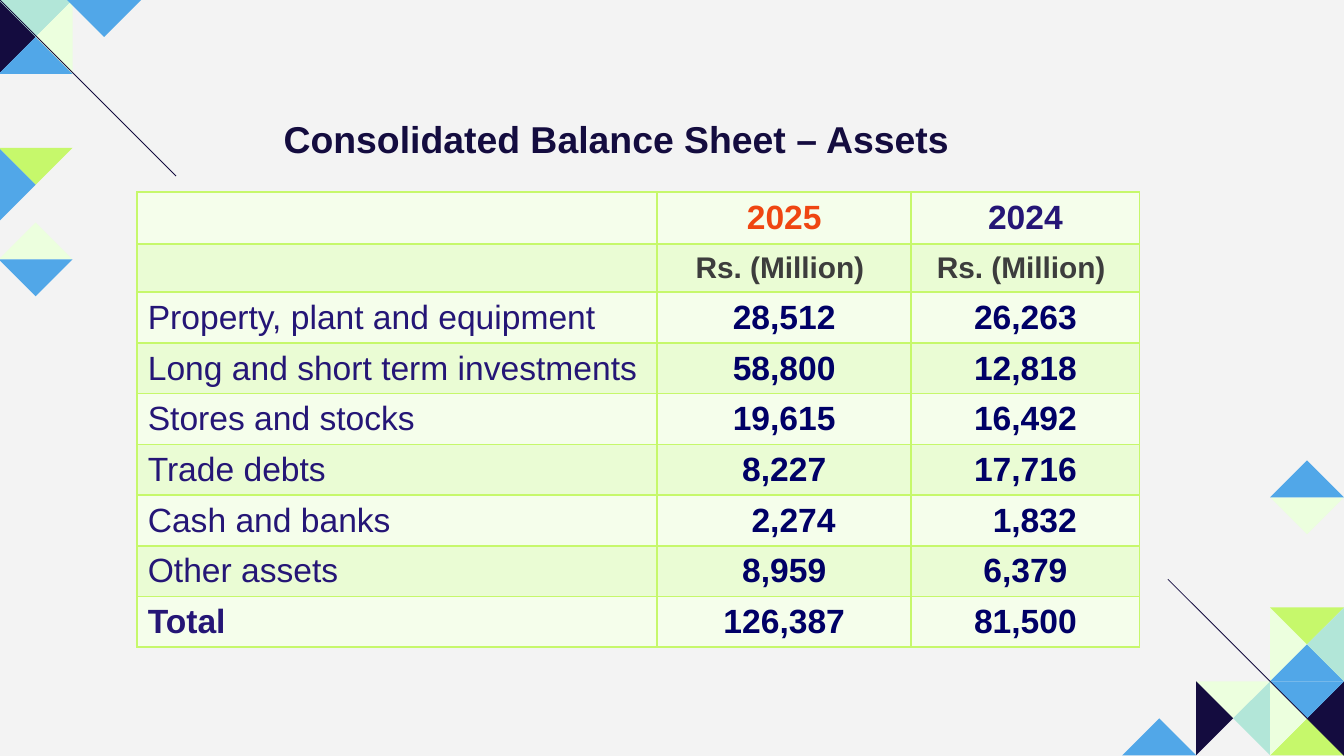
from dataclasses import dataclass

from lxml.etree import SubElement
from pptx import Presentation
from pptx.dml.color import RGBColor
from pptx.enum.shapes import MSO_CONNECTOR
from pptx.enum.text import MSO_ANCHOR, PP_ALIGN
from pptx.oxml.ns import qn
from pptx.util import Inches, Pt


@dataclass(frozen=True)
class Theme:
    """Colours, font and type sizes of the slide."""
    font: str = "Arial"
    paper: str = "F3F3F3"
    navy: str = "140C3F"
    sky: str = "51A7E8"
    mint: str = "B2E6D8"
    pale: str = "ECFFDE"
    lime: str = "C6F86B"
    label: str = "251676"
    value: str = "000066"
    accent: str = "EF4611"
    unit: str = "3D3D3D"
    bands: tuple = ("F5FEEB", "EAFCD4")
    title: int = 20
    body: int = 18
    small: int = 16


THEME = Theme()
TILE = 0.55
SIDES = {
    "top": ((0, 0), (1, 0)),
    "right": ((1, 0), (1, 1)),
    "bottom": ((1, 1), (0, 1)),
    "left": ((0, 1), (0, 0)),
}
TILES = [
    (8.9, 5.07, {"top": THEME.pale, "right": THEME.mint, "left": THEME.navy}),
    (9.45, 4.52, {"left": THEME.pale, "top": THEME.lime,
                  "bottom": THEME.sky, "right": THEME.mint}),
    (9.45, 5.07, {"right": THEME.navy, "bottom": THEME.lime,
                  "top": THEME.sky, "left": THEME.pale}),
    (8.35, 5.07, {"bottom": THEME.sky}),
    (9.45, 3.7, {"top": THEME.pale}),
    (9.45, 3.15, {"bottom": THEME.sky}),
    (-0.01, 0, {"left": THEME.navy, "top": THEME.mint,
                "bottom": THEME.sky, "right": THEME.pale}),
    (0.5, 0, {"top": THEME.sky}),
    (-0.01, 1.1, {"top": THEME.lime, "left": THEME.sky}),
    (-0.01, 1.38, {"bottom": THEME.pale}),
    (-0.01, 1.93, {"top": THEME.sky}),
]
LINES = [(0, 0), (8.69, 4.31)]
REACH = 1.31
ASSETS = [
    ("", "2025", "2024"),
    ("", "Rs. (Million) ", "Rs. (Million) "),
    ("Property, plant and equipment", "28,512", "26,263"),
    ("Long and short term investments", "58,800", "12,818"),
    ("Stores and stocks", "19,615", "16,492"),
    ("Trade debts", "8,227", "17,716"),
    ("Cash and banks", "2,274", "1,832"),
    ("Other assets", "8,959", "6,379"),
    ("Total", "126,387", "81,500"),
]
WIDTHS = (3.87, 1.89, 1.7)
HEIGHT, LOW = 3.38, 0.36
UNIT_ROW, CASH_ROW = 1, 6


def style(frame, size, color, bold=True):
    """Format every run of a text frame."""
    for par in frame.paragraphs:
        for run in par.runs:
            run.font.name = THEME.font
            run.font.size = Pt(size)
            run.font.bold = bold
            run.font.color.rgb = RGBColor.from_string(color)


def add_wedge(slide, left, top, side, color):
    """Draw the quarter of a square tile that rests on one side."""
    ends = SIDES[side] + ((0.5, 0.5),)
    spots = [(Inches(left + TILE * x), Inches(top + TILE * y)) for x, y in ends]
    pen = slide.shapes.build_freeform(*spots[0])
    pen.add_line_segments(spots[1:], close=True)
    wedge = pen.convert_to_shape()
    wedge.shadow.inherit = False
    wedge.fill.solid()
    wedge.fill.fore_color.rgb = RGBColor.from_string(color)
    wedge.line.fill.background()


def add_line(slide, left, top):
    """Draw a thin diagonal line down to the right."""
    line = slide.shapes.add_connector(
        MSO_CONNECTOR.STRAIGHT, Inches(left), Inches(top),
        Inches(left + REACH), Inches(top + REACH))
    line.line.color.rgb = RGBColor.from_string(THEME.navy)
    line.line.width = Pt(0.42)
    SubElement(line._element.spPr, qn("a:effectLst"))


def add_title(slide, text):
    """Place and format the title."""
    title = slide.shapes.title
    title.left, title.top = Inches(2.01), Inches(0.81)
    title.width, title.height = Inches(5.28), Inches(0.44)
    frame = title.text_frame
    frame.text = text
    frame.word_wrap = True
    frame.vertical_anchor = MSO_ANCHOR.MIDDLE
    frame.paragraphs[0].alignment = PP_ALIGN.LEFT
    style(frame, THEME.title, THEME.navy)


def add_rules(cell):
    """Give a cell a thin border on all sides."""
    props = cell._tc.get_or_add_tcPr()
    for tag in ("a:lnL", "a:lnR", "a:lnT", "a:lnB"):
        rule = SubElement(props, qn(tag), w=str(Pt(1)))
        fill = SubElement(rule, qn("a:solidFill"))
        SubElement(fill, qn("a:srgbClr"), val=THEME.lime)


def pick_look(row, col):
    """Return the size, colour and weight of a cell's text."""
    if row == 0:
        return THEME.body, THEME.accent if col == 1 else THEME.label, True
    if row == UNIT_ROW:
        return THEME.small, THEME.unit, True
    if col == 0:
        return THEME.body, THEME.label, row == len(ASSETS) - 1
    return THEME.body, THEME.value, True


def fill_cell(cell, row, col, text):
    """Write and format one table cell."""
    add_rules(cell)
    cell.fill.solid()
    cell.fill.fore_color.rgb = RGBColor.from_string(THEME.bands[row % 2])
    cell.vertical_anchor = MSO_ANCHOR.MIDDLE
    shift = 0.14 if row == CASH_ROW and col else 0
    cell.margin_left, cell.margin_right = Inches(0.08 + shift), Inches(0.08)
    cell.margin_top = cell.margin_bottom = Inches(0.04)
    cell.text_frame.text = text
    par = cell.text_frame.paragraphs[0]
    par.alignment = PP_ALIGN.CENTER if col else PP_ALIGN.LEFT
    look = pick_look(row, col)
    style(cell.text_frame, *look)
    if not text:
        SubElement(par._p, qn("a:endParaRPr"), sz=str(look[0] * 100))


def add_grid(slide):
    """Add the table of assets."""
    count = len(ASSETS)
    grid = slide.shapes.add_table(
        count, len(WIDTHS), Inches(1.02), Inches(1.43),
        Inches(sum(WIDTHS)), Inches(HEIGHT)).table
    grid.first_row = grid.horz_banding = False
    for col, width in enumerate(WIDTHS):
        grid.columns[col].width = Inches(width)
    tall = (HEIGHT - LOW) / (count - 1)
    for row, texts in enumerate(ASSETS):
        grid.rows[row].height = Inches(LOW if row == UNIT_ROW else tall)
        for col, text in enumerate(texts):
            fill_cell(grid.cell(row, col), row, col, text)


def main():
    """Build the slide and save it."""
    deck = Presentation()
    deck.slide_width = Inches(10)
    deck.slide_height = deck.slide_width * 9 // 16
    slide = deck.slides.add_slide(deck.slide_layouts[5])
    back = slide.background.fill
    back.solid()
    back.fore_color.rgb = RGBColor.from_string(THEME.paper)
    for left, top, wedges in TILES:
        for side, color in wedges.items():
            add_wedge(slide, left, top, side, color)
    for left, top in LINES:
        add_line(slide, left, top)
    add_title(slide, "Consolidated Balance Sheet – Assets")
    add_grid(slide)
    deck.save("out.pptx")


if __name__ == "__main__":
    main()
